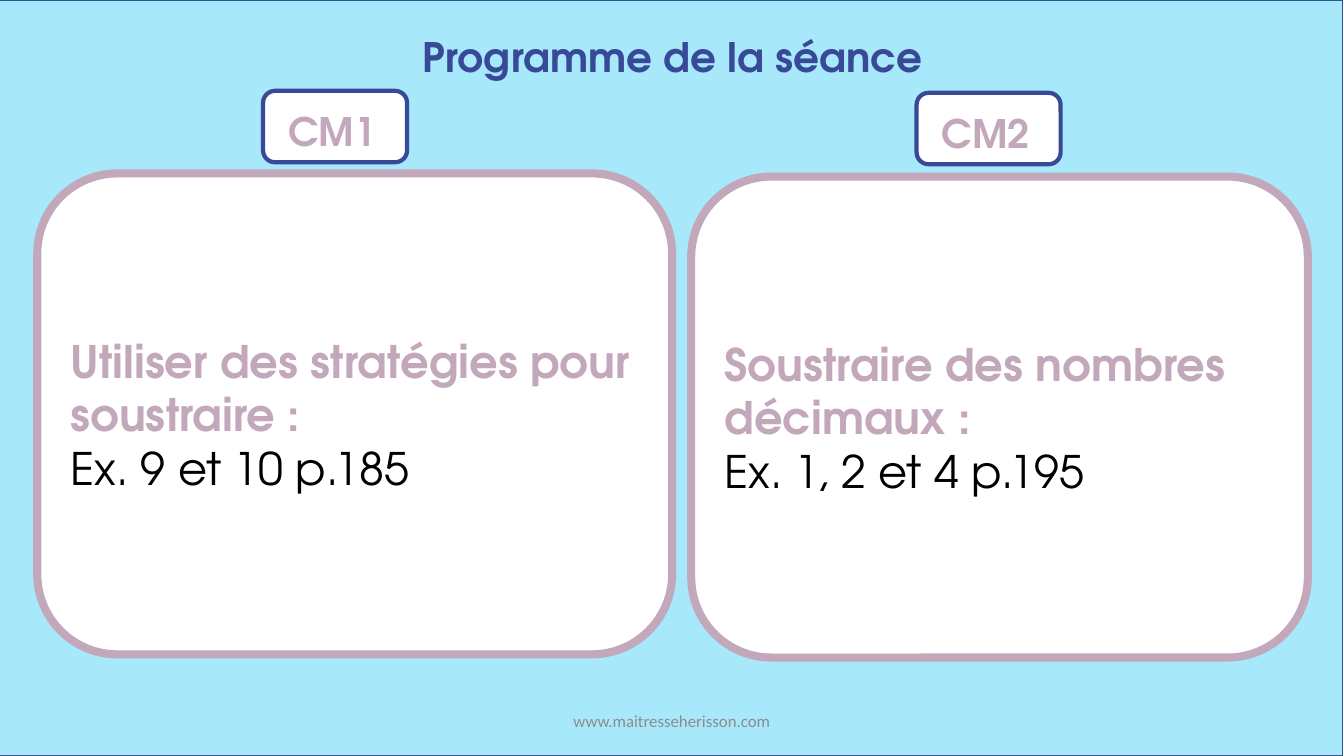
from pptx import Presentation
from pptx.dml.color import RGBColor
from pptx.enum.shapes import MSO_SHAPE
from pptx.enum.text import MSO_ANCHOR, PP_ALIGN
from pptx.util import Cm, Pt

FONT = "TeX Gyre Adventor"
BLUE, MAUVE, SKY = "374997", "C3A7BA", "A7E8FB"
WHITE, BLACK, GREY, NAVY = "FFFFFF", "000000", "8C8C8C", "325491"


def color(value):
    return RGBColor.from_string(value)


def add_box(shapes, kind, left, top, width, height, fill, line, weight):
    sp = shapes.add_shape(kind, Cm(left), Cm(top), Cm(width), Cm(height))
    sp.shadow.inherit = False
    sp.fill.solid()
    sp.fill.fore_color.rgb = color(fill)
    sp.line.color.rgb = color(line)
    sp.line.width = Pt(weight)
    return sp


def write(p, text, size=32, fill=BLACK, bold=False, font=FONT, align=PP_ALIGN.LEFT):
    p.alignment = align
    r = p.add_run()
    r.text = text
    r.font.name = font
    r.font.size = Pt(size)
    r.font.bold = bold
    r.font.color.rgb = color(fill)


def add_text(shapes, left, top, width, height, text, anchor=MSO_ANCHOR.TOP, **style):
    tf = shapes.add_textbox(Cm(left), Cm(top), Cm(width), Cm(height)).text_frame
    tf.word_wrap = True
    tf.vertical_anchor = anchor
    write(tf.paragraphs[0], text, **style)


def add_level(shapes, left, top, name):
    # Level badge: frame and label grouped together
    group = shapes.add_group_shape().shapes
    add_box(group, MSO_SHAPE.ROUNDED_RECTANGLE, left, top, 3.63, 1.8, WHITE, BLUE, 3)
    add_text(group, left + 0.39, top + 0.28, 2.79, 1.45, name,
             size=28, fill=MAUVE, bold=True)


def add_panel(shapes, left, top, width, goal, exercises):
    sp = add_box(shapes, MSO_SHAPE.ROUNDED_RECTANGLE, left, top, width, 12.12,
                 WHITE, MAUVE, 5.75)
    tf = sp.text_frame
    tf.word_wrap = True
    tf.vertical_anchor = MSO_ANCHOR.MIDDLE
    write(tf.paragraphs[0], goal, fill=MAUVE, bold=True)
    write(tf.add_paragraph(), exercises)


def main():
    prs = Presentation()
    prs.slide_width, prs.slide_height = Cm(33.87), Cm(19.05)
    s = prs.slides.add_slide(prs.slide_layouts[6])

    # Backdrop and title
    add_box(s.shapes, MSO_SHAPE.RECTANGLE, -0.03, 0, 33.87, 19.05, SKY, NAVY, 1)
    add_text(s.shapes, 0.03, 0.69, 33.87, 1.5, "Programme de la séance",
             size=29, fill=BLUE, bold=True, align=PP_ALIGN.CENTER)

    # One badge and one panel per level
    add_level(s.shapes, 6.63, 2.29, "CM1")
    add_panel(s.shapes, 0.94, 4.37, 16, "Utiliser des stratégies pour soustraire :",
              "Ex. 9 et 10 p.185")
    add_level(s.shapes, 23.1, 2.34, "CM2")
    add_panel(s.shapes, 17.42, 4.45, 15.54, "Soustraire des nombres décimaux :",
              "Ex. 1, 2 et 4 p.195")

    # Footer
    add_text(s.shapes, 11.22, 17.65, 11.43, 1.02, "www.maitresseherisson.com",
             anchor=MSO_ANCHOR.MIDDLE, size=12, fill=GREY, font="Calibri",
             align=PP_ALIGN.CENTER)

    prs.save("out.pptx")


if __name__ == "__main__":
    main()
